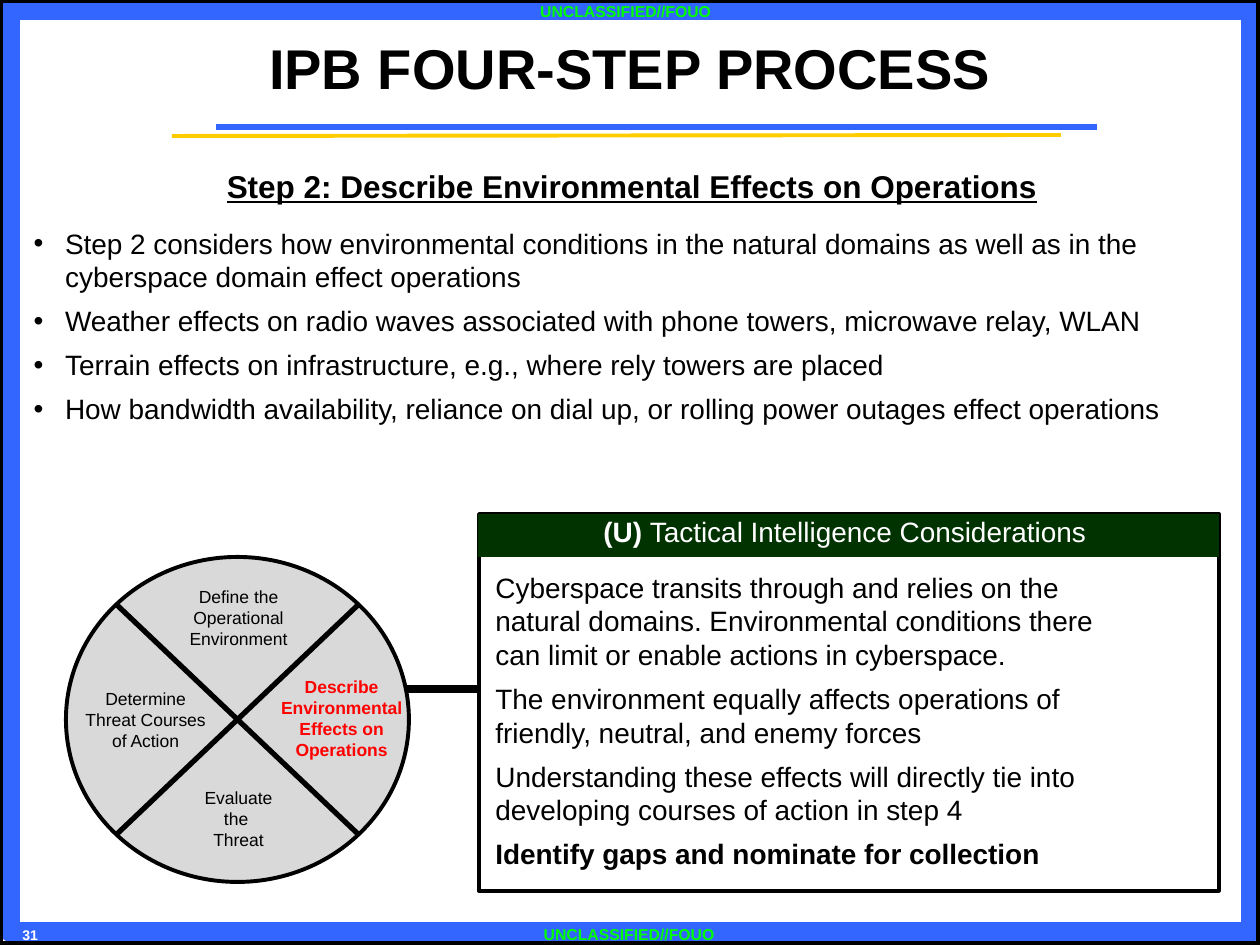
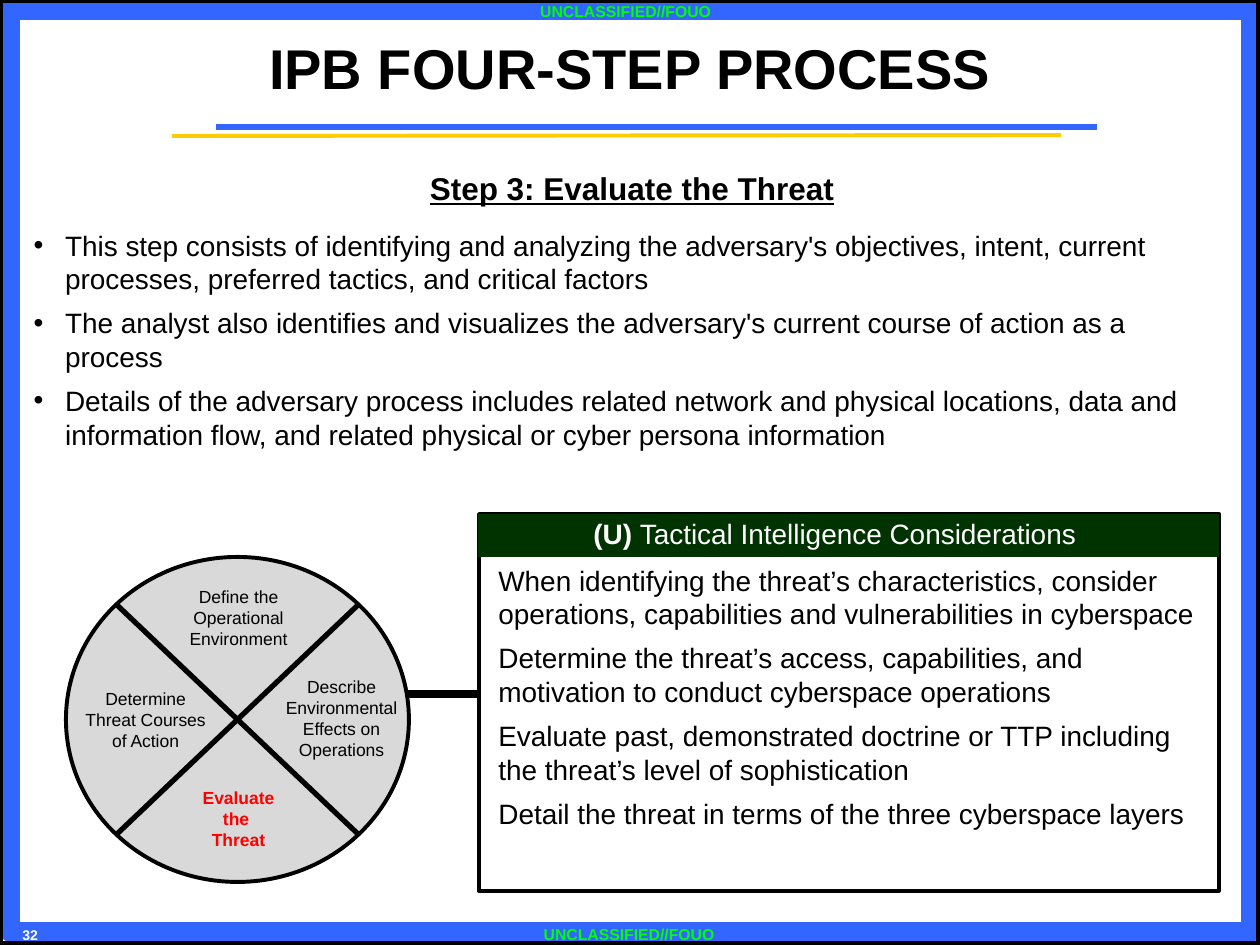
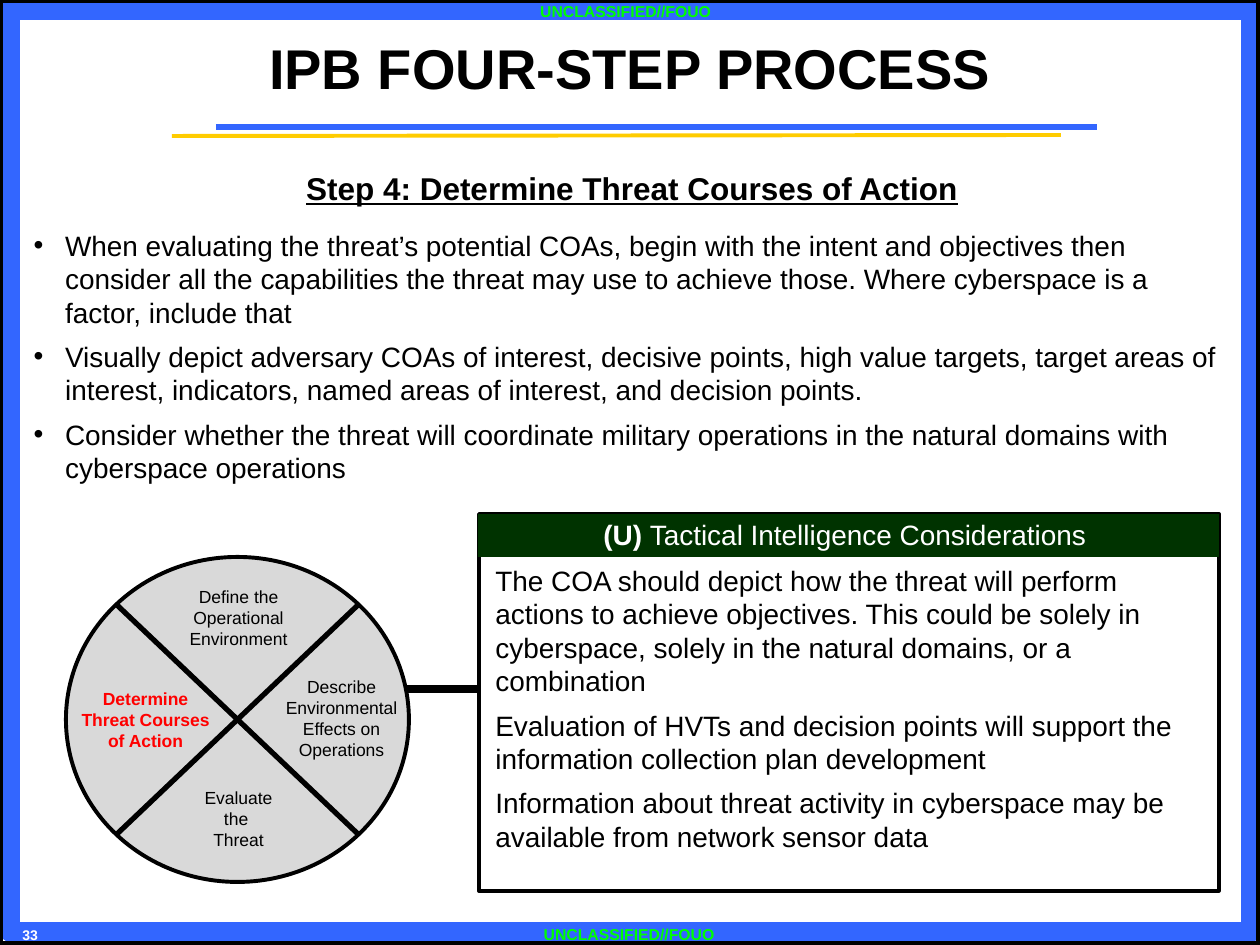
import dataclasses

import lxml.etree
import pptx
import pptx.dml.color
import pptx.enum.shapes
import pptx.enum.text
import pptx.oxml.ns
import pptx.util

EMU_PER_PX = 914400 / 126
PAGE_WIDTH, PAGE_HEIGHT = 1260, 945
FONT = "Arial"
BLACK = pptx.dml.color.RGBColor(0x00, 0x00, 0x00)
WHITE = pptx.dml.color.RGBColor(0xFF, 0xFF, 0xFF)
BLUE = pptx.dml.color.RGBColor(0x33, 0x66, 0xFF)
GOLD = pptx.dml.color.RGBColor(0xFF, 0xCC, 0x00)
LIME = pptx.dml.color.RGBColor(0x00, 0xFF, 0x00)
RED = pptx.dml.color.RGBColor(0xFF, 0x00, 0x00)
GREEN = pptx.dml.color.RGBColor(0x00, 0x33, 0x00)
GRAY = pptx.dml.color.RGBColor(0xD9, 0xD9, 0xD9)

SHAPES = pptx.enum.shapes.MSO_SHAPE
LEFT = pptx.enum.text.PP_ALIGN.LEFT
CENTER = pptx.enum.text.PP_ALIGN.CENTER
TOP = pptx.enum.text.MSO_ANCHOR.TOP
MIDDLE = pptx.enum.text.MSO_ANCHOR.MIDDLE

TITLE = "IPB FOUR-STEP PROCESS"
MARKING = "UNCLASSIFIED//FOUO"
MARKING_BOXES = [(426, -4, 399, 26), (464, 919, 330, 32)]
WHEEL_BOX = (66, 557, 343, 325)
PANEL_BOX = (478, 514, 741, 377)
BAND_HEIGHT = 43
WHEEL_LABELS = [
    (["Define the Operational Environment"], (73, 23, 199, 77)),
    (["Describe Environmental Effects on Operations"], (190, 113, 171, 97)),
    (["Evaluate the ", "Threat"], (119, 224, 107, 77)),
    (["Determine Threat Courses of Action"], (2, 125, 155, 77)),
]


@dataclasses.dataclass
class Step:
    number: int
    page_number: int
    heading: str
    bullets: list
    considerations: list
    body_box: tuple
    link: tuple
    label_offset: tuple
    text_offset: tuple
    text_width: int
    closing: str = ""


STEPS = [
    Step(
        number=2,
        page_number=31,
        heading="Step 2: Describe Environmental Effects on Operations",
        bullets=[
            "Step 2 considers how environmental conditions in the natural domains as well as in the cyberspace domain effect operations",
            "Weather effects on radio waves associated with phone towers, microwave relay, WLAN",
            "Terrain effects on infrastructure, e.g., where rely towers are placed",
            "How bandwidth availability, reliance on dial up, or rolling power outages effect operations",
        ],
        considerations=[
            "Cyberspace transits through and relies on the natural domains. Environmental conditions there can limit or enable actions in cyberspace.",
            "The environment equally affects operations of friendly, neutral, and enemy forces",
            "Understanding these effects will directly tie into developing courses of action in step 4",
        ],
        closing="Identify gaps and nominate for collection",
        body_box=(21, 161, 1222, 273),
        link=(404, 478, 689),
        label_offset=(113, -6),
        text_offset=(5, 50),
        text_width=674,
    ),
    Step(
        number=3,
        page_number=32,
        heading="Step 3: Evaluate the Threat",
        bullets=[
            "This step consists of identifying and analyzing the adversary's objectives, intent, current processes, preferred tactics, and critical factors",
            "The analyst also identifies and visualizes the adversary's current course of action as a process",
            "Details of the adversary process includes related network and physical locations, data and information flow, and related physical or cyber persona information",
        ],
        considerations=[
            "When identifying the threat’s characteristics, consider operations, capabilities and vulnerabilities in cyberspace",
            "Determine the threat’s access, capabilities, and motivation to conduct cyberspace operations",
            "Evaluate past, demonstrated doctrine or TTP including the threat’s level of sophistication",
            "Detail the threat in terms of the three cyberspace layers",
        ],
        body_box=(21, 163, 1222, 297),
        link=(408, 480, 694),
        label_offset=(103, -4),
        text_offset=(8, 43),
        text_width=736,
    ),
    Step(
        number=4,
        page_number=33,
        heading="Step 4: Determine Threat Courses of Action",
        bullets=[
            "When evaluating the threat’s potential COAs, begin with the intent and objectives then consider all the capabilities the threat may use to achieve those. Where cyberspace is a factor, include that",
            "Visually depict adversary COAs of interest, decisive points, high value targets, target areas of interest, indicators, named areas of interest, and decision points.",
            "Consider whether the threat will coordinate military operations in the natural domains with cyberspace operations",
        ],
        considerations=[
            "The COA should depict how the threat will perform actions to achieve objectives. This could be solely in cyberspace, solely in the natural domains, or a combination",
            "Evaluation of HVTs and decision points will support the information collection plan development",
            "Information about threat activity in cyberspace may be available from network sensor data",
        ],
        body_box=(21, 163, 1222, 331),
        link=(404, 478, 689),
        label_offset=(113, -3),
        text_offset=(5, 43),
        text_width=731,
    ),
]


def px(length):
    return pptx.util.Emu(round(length * EMU_PER_PX))


def to_emu(box):
    return [px(length) for length in box]


def set_bullet(para, bullet):
    properties = para._p.get_or_add_pPr()
    indent = pptx.util.Inches(0.25) if bullet else 0
    properties.set("marL", str(indent))
    properties.set("indent", str(-indent))
    tag = "a:buChar" if bullet else "a:buNone"
    mark = lxml.etree.SubElement(properties, pptx.oxml.ns.qn(tag))
    if bullet:
        mark.set("char", bullet)


def write(frame, text, size=16, color=BLACK, bold=False, underline=False,
          align=LEFT, before=0, after=0, bullet="", para=None):
    if para is None:
        first = frame.paragraphs[0]
        para = frame.add_paragraph() if first.runs else first
        para.alignment = align
        para.space_before = pptx.util.Pt(before)
        para.space_after = pptx.util.Pt(after)
        set_bullet(para, bullet)
    span = para.add_run()
    span.text = text
    span.font.name = FONT
    span.font.size = pptx.util.Pt(size)
    span.font.bold = bold
    span.font.underline = underline
    span.font.color.rgb = color
    return para


def add_text_frame(page, box, wrap=True):
    frame = page.shapes.add_textbox(*to_emu(box)).text_frame
    frame.word_wrap = wrap
    return frame


def place_placeholder(placeholder, box, anchor):
    placeholder.left, placeholder.top, placeholder.width, placeholder.height = to_emu(box)
    frame = placeholder.text_frame
    frame.auto_size = pptx.enum.text.MSO_AUTO_SIZE.NONE
    frame.vertical_anchor = anchor
    frame.word_wrap = True
    return frame


def add_shape(page, kind, box, fill=None, line=None, weight=0):
    shape = page.shapes.add_shape(kind, *to_emu(box))
    shape.shadow.inherit = False
    if fill is None:
        shape.fill.background()
    else:
        shape.fill.solid()
        shape.fill.fore_color.rgb = fill
    if line is None:
        shape.line.fill.background()
    else:
        shape.line.color.rgb = line
        shape.line.width = pptx.util.Pt(weight)
    return shape


def add_line(page, start, end, color, weight):
    line = page.shapes.add_connector(
        pptx.enum.shapes.MSO_CONNECTOR.STRAIGHT, *to_emu(start + end))
    line.line.color.rgb = color
    line.line.width = pptx.util.Pt(weight)
    lxml.etree.SubElement(line._element.spPr, pptx.oxml.ns.qn("a:effectLst"))


def draw_surround(page, page_number):
    add_shape(page, SHAPES.RECTANGLE, (10, 10, 1241, 922), line=BLUE, weight=11)
    add_shape(page, SHAPES.RECTANGLE, (0, 0, PAGE_WIDTH, PAGE_HEIGHT), line=BLACK, weight=4)
    add_line(page, (216, 127), (1097, 127), BLUE, 3)
    add_line(page, (172, 136), (1061, 135), GOLD, 2.25)
    for box in MARKING_BOXES:
        write(add_text_frame(page, box), MARKING, size=9, color=LIME, bold=True, align=CENTER)
    number_frame = add_text_frame(page, (10, 920, 98, 29))
    write(number_frame, str(page_number), size=8, color=WHITE, bold=True)


def fill_title(page):
    frame = place_placeholder(page.shapes.title, (0, 11, PAGE_WIDTH, 112), MIDDLE)
    write(frame, TITLE, size=32, bold=True, align=CENTER)


def fill_body(page, box, heading, bullets):
    frame = place_placeholder(page.placeholders[1], box, TOP)
    write(frame, heading, size=18, bold=True, underline=True, align=CENTER)
    for index, bullet_text in enumerate(bullets):
        write(frame, bullet_text, before=0 if index else 12, after=6, bullet="•")


def draw_wheel(page, box, current_step):
    left, top, width, height = box
    add_shape(page, SHAPES.OVAL, box, fill=GRAY, line=BLACK, weight=2.25)
    inset = 51, 48
    west, east = left + inset[0], left + width - inset[0]
    north, south = top + inset[1], top + height - inset[1]
    add_line(page, (west, north), (east, south), BLACK, 3)
    add_line(page, (east, north), (west, south), BLACK, 3)
    for number, (lines, (x, y, label_width, label_height)) in enumerate(WHEEL_LABELS, 1):
        frame = add_text_frame(page, (left + x, top + y, label_width, label_height))
        current = number == current_step
        for text in lines:
            write(frame, text, size=10, color=RED if current else BLACK,
                  bold=current, align=CENTER)


def draw_panel(page, box, step):
    left, top, width, height = box
    add_shape(page, SHAPES.RECTANGLE, (left + 1, top, width - 1, height), line=BLACK, weight=2)
    add_shape(page, SHAPES.RECTANGLE, (left, top, width, BAND_HEIGHT), fill=GREEN)
    x, y = step.label_offset
    label = add_text_frame(page, (left + x, top + y, 514, 47), wrap=False)
    para = write(label, "(U) ", color=WHITE, bold=True)
    write(label, "Tactical Intelligence Considerations", color=WHITE, para=para)
    x, y = step.text_offset
    frame = add_text_frame(page, (left + x, top + y, step.text_width, height - y))
    for text in step.considerations:
        write(frame, text, after=6)
    if step.closing:
        write(frame, step.closing, bold=True, after=6)


def build_step_page(deck, step):
    page = deck.slides.add_slide(deck.slide_layouts[1])
    draw_surround(page, step.page_number)
    fill_title(page)
    fill_body(page, step.body_box, step.heading, step.bullets)
    link_start, link_end, link_y = step.link
    add_line(page, (link_start, link_y), (link_end, link_y), BLACK, 4.5)
    draw_wheel(page, WHEEL_BOX, step.number)
    draw_panel(page, PANEL_BOX, step)


def main():
    deck = pptx.Presentation()
    deck.slide_width, deck.slide_height = px(PAGE_WIDTH), px(PAGE_HEIGHT)
    for step in STEPS:
        build_step_page(deck, step)
    deck.save("out.pptx")


if __name__ == "__main__":
    main()
